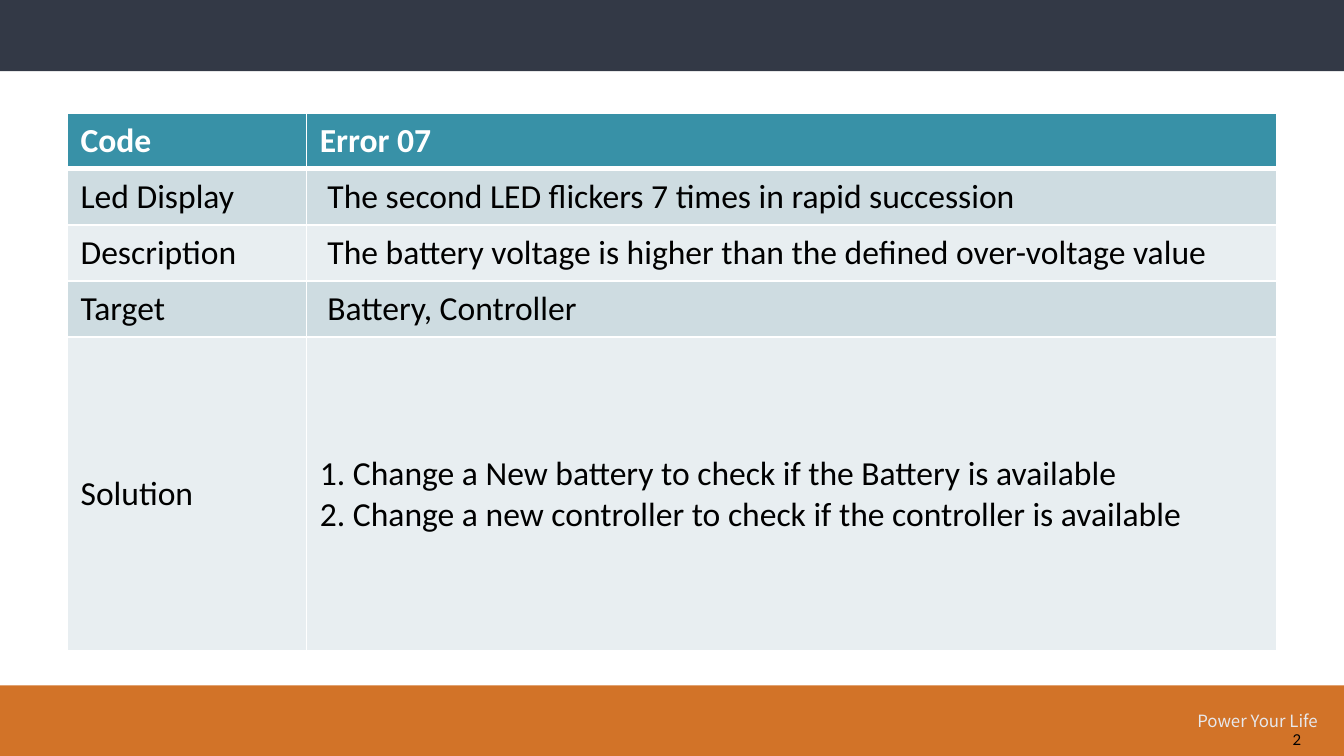
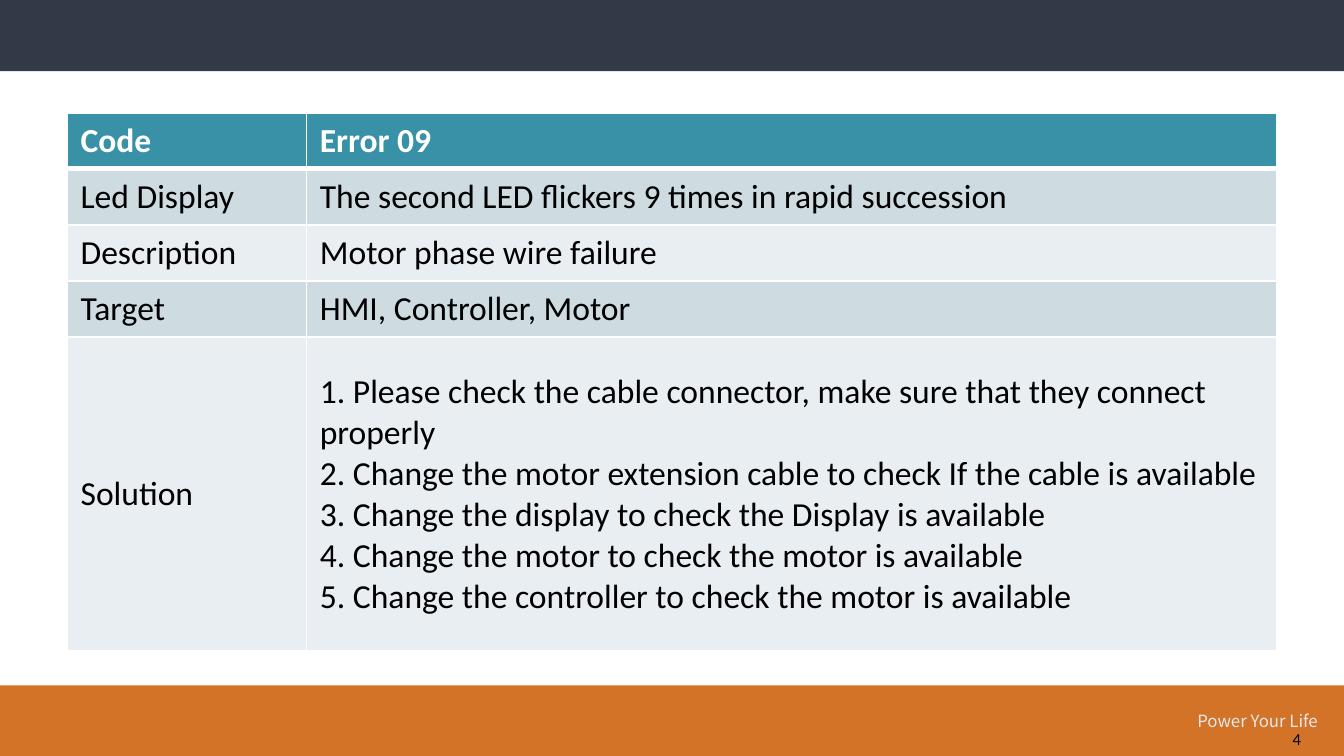
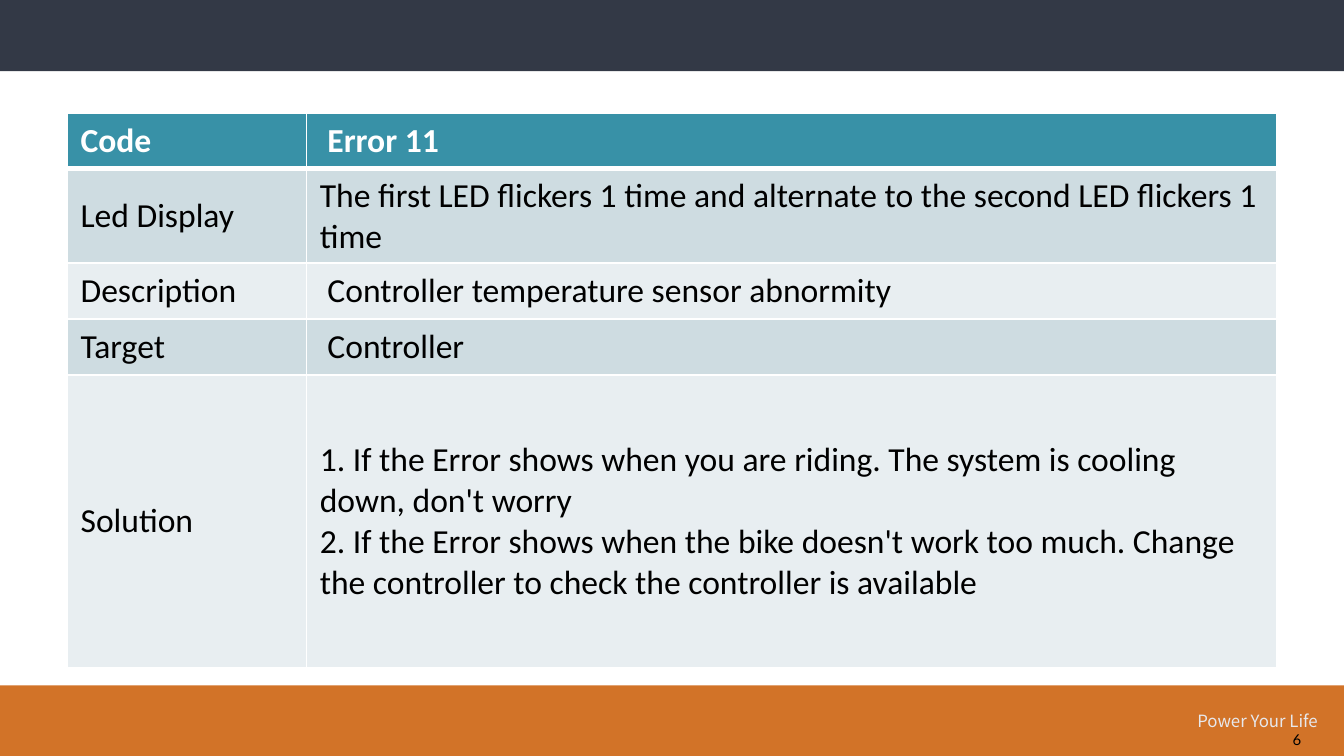
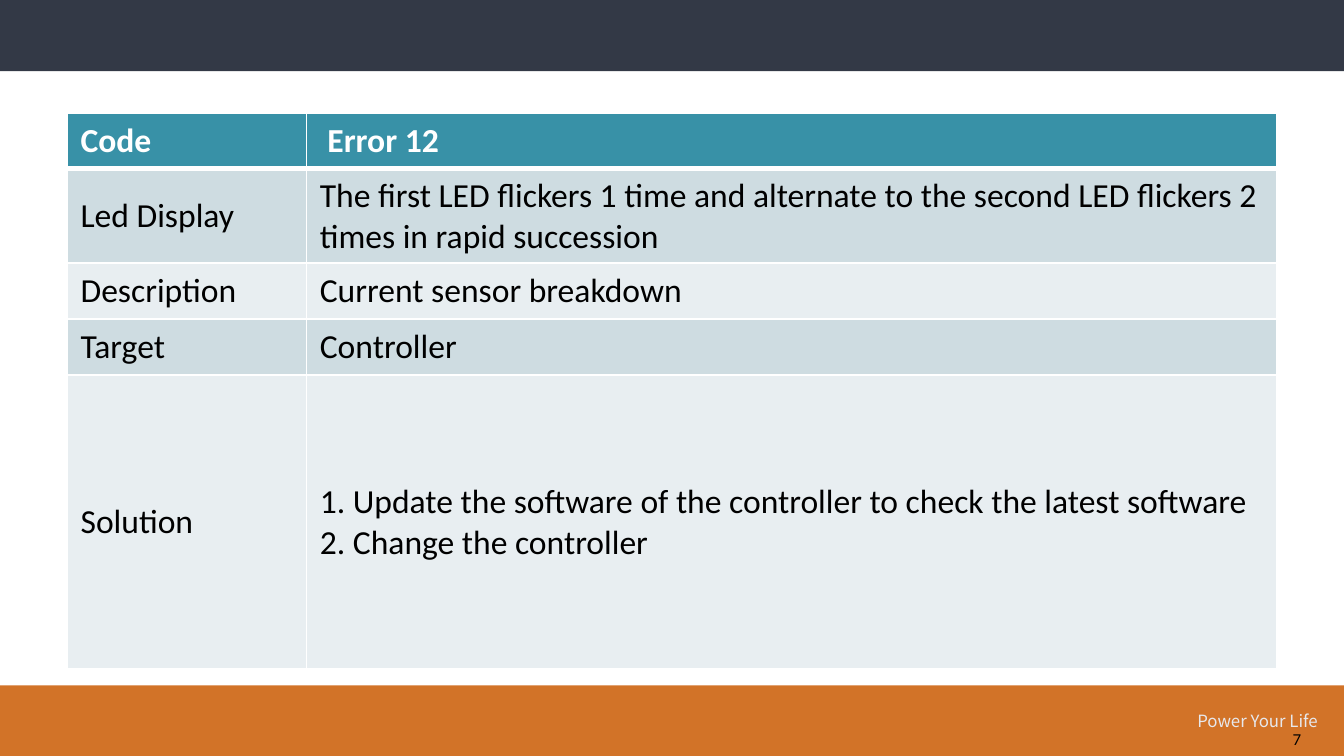
"""Build four slides of error codes, each with one table."""
from lxml import etree
from pptx import Presentation
from pptx.dml.color import RGBColor
from pptx.enum.shapes import MSO_SHAPE
from pptx.enum.text import MSO_ANCHOR
from pptx.oxml.ns import qn
from pptx.util import Inches, Pt

RECT = MSO_SHAPE.RECTANGLE
TOP, MIDDLE = MSO_ANCHOR.TOP, MSO_ANCHOR.MIDDLE

NAVY = RGBColor(0x33, 0x39, 0x46)
ORANGE = RGBColor(0xD2, 0x73, 0x28)
PALE = RGBColor(0xE7, 0xE8, 0xEC)
TEAL = RGBColor(0x38, 0x91, 0xA7)
DARK = RGBColor(0xCE, 0xDC, 0xE1)
LIGHT = RGBColor(0xE8, 0xEE, 0xF1)
WHITE = RGBColor(0xFF, 0xFF, 0xFF)
BLACK = RGBColor(0x00, 0x00, 0x00)

LABELS = ["Code", "Led Display", "Description", "Target", "Solution"]
SLOGAN = "Power Your Life"
ERRORS = [
    {"page": 2, "last": 2.34, "values": [
        "Error 07",
        " The second LED flickers 7 times in rapid succession",
        " The battery voltage is higher than the defined over-voltage value",
        " Battery, Controller",
        ["1. Change a New battery to check if the Battery is available",
         "2. Change a new controller to check if the controller is available"]]},
    {"page": 4, "last": 2.34, "values": [
        "Error 09",
        "The second LED flickers 9 times in rapid succession",
        "Motor phase wire failure",
        "HMI, Controller, Motor",
        ["1. Please check the cable connector, make sure that they connect properly",
         "2. Change the motor extension cable to check If the cable is available",
         "3. Change the display to check the Display is available",
         "4. Change the motor to check the motor is available",
         "5. Change the controller to check the motor is available"]]},
    {"page": 6, "last": 2.18, "values": [
        " Error 11",
        "The first LED flickers 1 time and alternate to the second LED flickers 1 time",
        " Controller temperature sensor abnormity",
        " Controller",
        ["1. If the Error shows when you are riding. The system is cooling down, don't worry",
         "2. If the Error shows when the bike doesn't work too much. "
         "Change the controller to check the controller is available"]]},
    {"page": 7, "last": 2.19, "values": [
        " Error 12",
        "The first LED flickers 1 time and alternate to the second LED flickers 2 "
        "times in rapid succession",
        "Current sensor breakdown",
        "Controller",
        ["1. Update the software of the controller to check the latest software",
         "2. Change the controller"]]},
]

WIDTH = 10
HEIGHT = WIDTH * 9 / 16
BAND = 0.53
BANDS = [(0, NAVY), (5.1, ORANGE)]
LEFT, TABLE_TOP = 0.5, 0.84
COLS, ROW = [1.78, 7.22], 30 / 72
RULE, THICK = 1, 3


def write(frame, text, size=18, font="Calibri", color=BLACK, bold=False, anchor=TOP):
    lines = [text] if isinstance(text, str) else text
    frame.word_wrap = True
    frame.vertical_anchor = anchor
    for n, line in enumerate(lines):
        para = frame.add_paragraph() if n else frame.paragraphs[0]
        run = para.add_run()
        run.text = line
        run.font.size = Pt(size)
        run.font.name = font
        run.font.color.rgb = color
        run.font.bold = bold


def add_text(slide, box, text, **style):
    shape = slide.shapes.add_textbox(*map(Inches, box))
    write(shape.text_frame, text, **style)


def add_frame(slide, page):
    for top, color in BANDS:
        band = slide.shapes.add_shape(RECT, 0, Inches(top), Inches(WIDTH), Inches(BAND))
        band.shadow.inherit = False
        band.fill.solid()
        band.fill.fore_color.rgb = color
        band.line.fill.background()
    add_text(slide, (8.81, 5.24, 1.19, 0.25), SLOGAN,
             size=9, font="Noto Sans CJK SC", color=PALE)
    add_text(slide, (9.52, 5.39, 2.33, 0.2), str(page), size=8, font="Lato")


def set_edges(cell, **widths):
    props = cell._tc.get_or_add_tcPr()
    for side in "LRTB":
        width = Pt(widths.get(side, RULE))
        edge = etree.SubElement(props, qn(f"a:ln{side}"), w=str(int(width)))
        fill = etree.SubElement(edge, qn("a:solidFill"))
        etree.SubElement(fill, qn("a:srgbClr"), val=str(WHITE))


def add_table(slide, values, last):
    heights = [ROW] * (len(LABELS) - 1) + [last]
    box = LEFT, TABLE_TOP, sum(COLS), sum(heights)
    table = slide.shapes.add_table(len(LABELS), len(COLS), *map(Inches, box)).table
    for col, width in zip(table.columns, COLS):
        col.width = Inches(width)
    for r, (height, *texts) in enumerate(zip(heights, LABELS, values)):
        table.rows[r].height = Inches(height)
        head = r == 0
        edges = {0: {"B": THICK}, 1: {"T": THICK}}.get(r, {})
        for c, text in enumerate(texts):
            cell = table.cell(r, c)
            set_edges(cell, **edges)
            cell.fill.solid()
            cell.fill.fore_color.rgb = TEAL if head else DARK if r % 2 else LIGHT
            write(cell.text_frame, text, color=WHITE if head else BLACK, bold=head)
            cell.vertical_anchor = MIDDLE


def main():
    deck = Presentation()
    deck.slide_width, deck.slide_height = Inches(WIDTH), Inches(HEIGHT)
    for error in ERRORS:
        slide = deck.slides.add_slide(deck.slide_layouts[6])
        add_frame(slide, error["page"])
        add_table(slide, error["values"], error["last"])
    deck.save("out.pptx")


if __name__ == "__main__":
    main()
